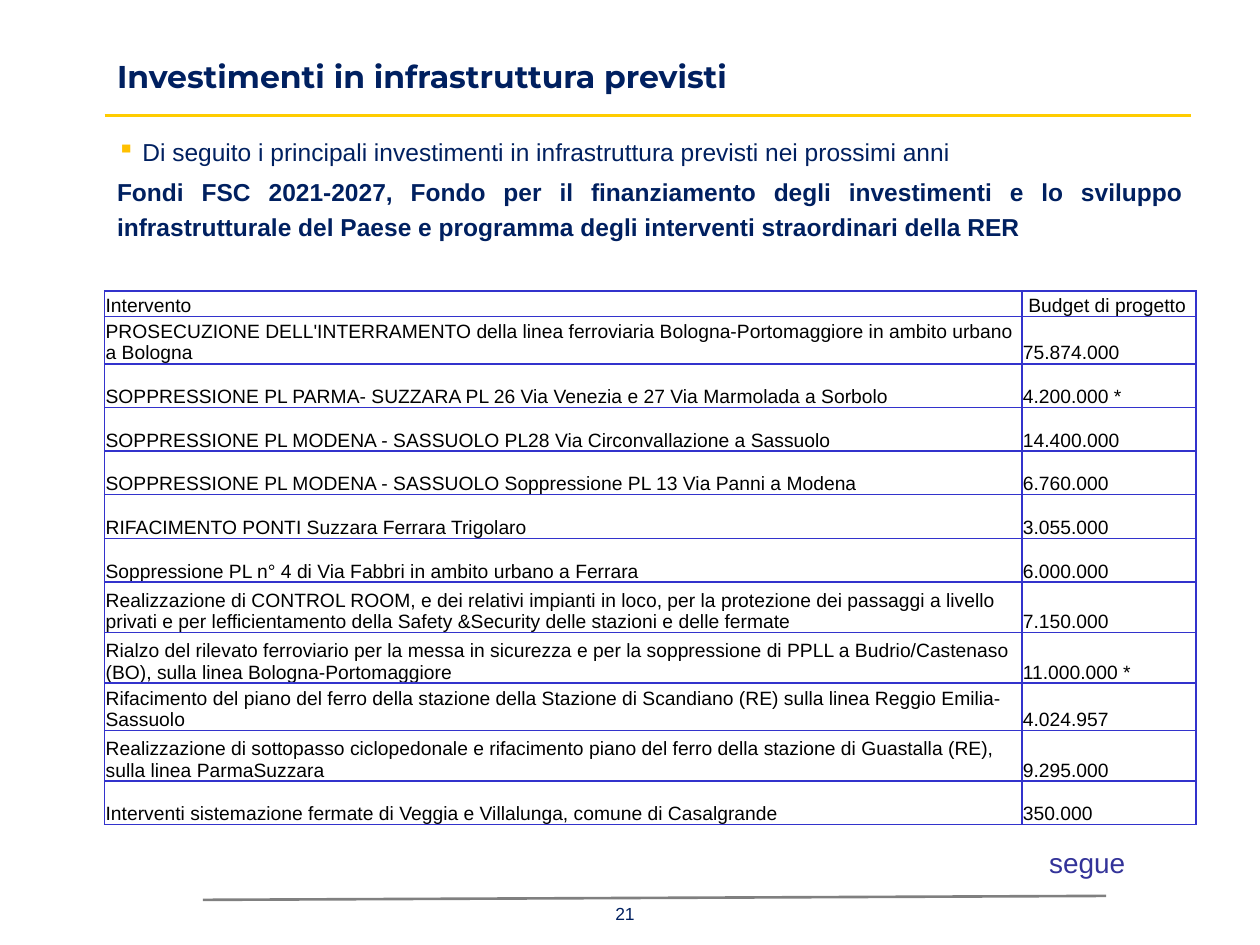
"""Build the slide on planned rail infrastructure investments."""
from dataclasses import dataclass

from lxml import etree
from pptx import Presentation
from pptx import util as u
from pptx.dml import color
from pptx.enum import shapes, text
from pptx.oxml import ns

NAVY, GOLD, BLUE = "002060", "FFCC00", "3333CC"
LEFT, WIDE = 2.11, 22.0
LOW, MID, HIGH = 0.51, 0.88, 1.02


@dataclass
class Row:
    work: str
    cost: str
    high: float = MID


@dataclass
class Rule:
    start: tuple[float, float]
    end: tuple[float, float]
    tint: str


ROWS = [
    Row("Intervento", "Budget di progetto", LOW),
    Row("PROSECUZIONE DELL'INTERRAMENTO della linea ferroviaria "
        "Bologna-Portomaggiore in ambito urbano a Bologna", "75.874.000"),
    Row("SOPPRESSIONE PL PARMA- SUZZARA PL 26 Via Venezia e 27 Via Marmolada a Sorbolo",
        "4.200.000 *"),
    Row("SOPPRESSIONE PL MODENA - SASSUOLO PL28 Via Circonvallazione a Sassuolo",
        "14.400.000"),
    Row("SOPPRESSIONE PL MODENA - SASSUOLO Soppressione PL 13 Via Panni a Modena",
        "6.760.000"),
    Row("RIFACIMENTO PONTI Suzzara Ferrara Trigolaro", "3.055.000"),
    Row("Soppressione PL n° 4 di Via Fabbri in ambito urbano a Ferrara", "6.000.000"),
    Row("Realizzazione di CONTROL ROOM, e dei relativi impianti in loco, per la "
        "protezione dei passaggi a livello privati e per lefficientamento della "
        "Safety &Security delle stazioni e delle fermate", "7.150.000", HIGH),
    Row("Rialzo del rilevato ferroviario per la messa in sicurezza e per la "
        "soppressione di PPLL a Budrio/Castenaso (BO), sulla linea "
        "Bologna-Portomaggiore", "11.000.000 *", HIGH),
    Row("Rifacimento del piano del ferro della stazione della Stazione di Scandiano "
        "(RE) sulla linea Reggio Emilia-Sassuolo", "4.024.957"),
    Row("Realizzazione di sottopasso ciclopedonale e rifacimento piano del ferro "
        "della stazione di Guastalla (RE), sulla linea ParmaSuzzara",
        "9.295.000", HIGH),
    Row("Interventi sistemazione fermate di Veggia e Villalunga, comune di Casalgrande",
        "350.000"),
]
RULES = [
    Rule((4.09, 18.14), (22.3, 18.06), "808080"),
    Rule((LEFT, 2.33), (24.0, 2.33), GOLD),
]


def tone(code: str) -> color.RGBColor:
    return color.RGBColor.from_string(code)


def style(para, size: float, tint: str, bold: bool = False, face: str = "Arial") -> None:
    font = para.font
    font.size, font.name, font.bold = u.Pt(size), face, bold
    font.color.rgb = tone(tint)


def add_box(slide, area: tuple, lines: list[str], anchor=text.MSO_ANCHOR.TOP,
            wrap: bool = True) -> list:
    frame = slide.shapes.add_textbox(*map(u.Cm, area)).text_frame
    frame.word_wrap, frame.vertical_anchor = wrap, anchor
    frame.text = "\n".join(lines)
    return list(frame.paragraphs)


def add_rule(slide, rule: Rule) -> None:
    line = slide.shapes.add_connector(
        shapes.MSO_CONNECTOR.STRAIGHT, *map(u.Cm, rule.start + rule.end))
    line.line.color.rgb, line.line.width = tone(rule.tint), u.Pt(1.5)
    etree.SubElement(line._element.spPr, ns.qn("a:effectLst"))


def add_mark(para) -> None:
    props = para._p.get_or_add_pPr()
    props.set("marL", str(u.Cm(0.51)))
    props.set("indent", str(u.Cm(-0.51)))
    tint = etree.SubElement(props, ns.qn("a:buClr"))
    etree.SubElement(tint, ns.qn("a:srgbClr"), val="FFC000")
    etree.SubElement(props, ns.qn("a:buChar"), char="▪")


def add_edges(cell) -> None:
    props = cell._tc.get_or_add_tcPr()
    for side in "LRTB":
        edge = etree.SubElement(props, ns.qn(f"a:ln{side}"), w=str(u.Pt(1)))
        fill = etree.SubElement(edge, ns.qn("a:solidFill"))
        etree.SubElement(fill, ns.qn("a:srgbClr"), val=BLUE)


def fill_cell(cell, words: str) -> None:
    add_edges(cell)
    cell.fill.background()
    cell.vertical_anchor = text.MSO_ANCHOR.BOTTOM
    cell.margin_left = cell.margin_right = cell.margin_top = u.Cm(0.02)
    cell.margin_bottom = 0
    cell.text = words
    style(cell.text_frame.paragraphs[0], 11, "000000")


def add_grid(slide, rows: list[Row]) -> None:
    cols = (18.49, 3.51)
    tall = sum(row.high for row in rows)
    grid = slide.shapes.add_table(
        len(rows), len(cols), *map(u.Cm, (LEFT, 5.87, WIDE, tall))).table
    grid.first_row = grid.horz_banding = False
    for col, wide in zip(grid.columns, cols):
        col.width = u.Cm(wide)
    for i, row in enumerate(rows):
        grid.rows[i].height = u.Cm(row.high)
        for j, words in enumerate((row.work, row.cost)):
            fill_cell(grid.cell(i, j), words)
    grid.cell(0, 1).margin_left = u.Cm(0.13)


def add_body(slide) -> None:
    lead, fund = add_box(slide, (LEFT, 2.51, WIDE, 14.2), [
        "Di seguito i principali investimenti in infrastruttura previsti nei prossimi anni",
        "Fondi FSC 2021-2027, Fondo per il finanziamento degli investimenti e lo sviluppo "
        "infrastrutturale del Paese e programma degli interventi straordinari della RER"])
    add_mark(lead)
    for para in (lead, fund):
        para.alignment, para.line_spacing = text.PP_ALIGN.JUSTIFY, 1.2
        style(para, 14, NAVY, para is fund)
    fund.space_before = u.Pt(3)


def main() -> None:
    deck = Presentation()
    deck.slide_width, deck.slide_height = u.Cm(25.4), u.Cm(19.05)
    slide = deck.slides.add_slide(deck.slide_layouts[6])
    middle = text.MSO_ANCHOR.MIDDLE
    page, = add_box(slide, (9.96, 17.78, 5.28, 1.27), ["21"], middle)
    page.alignment = text.PP_ALIGN.CENTER
    style(page, 10, NAVY)
    for rule in RULES:
        add_rule(slide, rule)
    title, = add_box(slide, (LEFT, 0.71, WIDE, 1.63),
                     ["Investimenti in infrastruttura previsti"], middle)
    style(title, 18, NAVY, True, "Montserrat")
    add_body(slide)
    add_grid(slide, ROWS)
    more, = add_box(slide, (20.9, 16.92, 2.06, 0.94), ["segue"], wrap=False)
    style(more, 16, "333399")
    deck.save("out.pptx")


if __name__ == "__main__":
    main()
